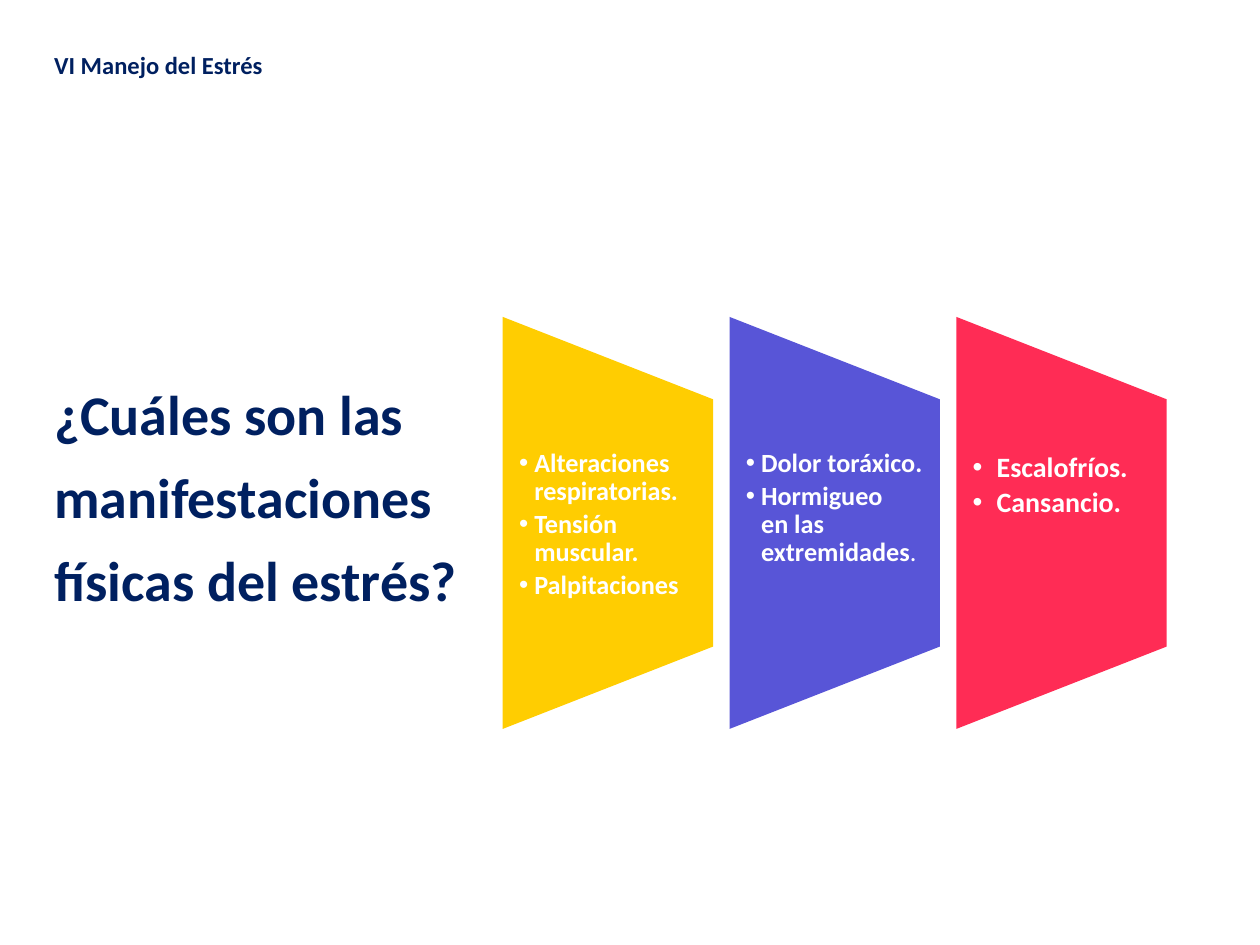
"""Build the slide on the physical signs of stress."""
from copy import deepcopy
from dataclasses import dataclass

from lxml import etree
from pptx import Presentation
from pptx.dml.color import RGBColor
from pptx.enum.shapes import MSO_SHAPE as Preset
from pptx.enum.text import MSO_ANCHOR as Anchor, MSO_AUTO_SIZE as AutoSize, PP_ALIGN as Align
from pptx.oxml.ns import qn
from pptx.util import Inches, Pt


@dataclass(frozen=True)
class Theme:
    font: str = "Calibri"
    navy: str = "002060"
    white: str = "FFFFFF"
    yellow: str = "FFCD01"
    violet: str = "5855D7"
    red: str = "FF2C55"
    question_size: int = 32
    header_size: int = 14
    list_size: int = 15
    short_list_size: int = 16


theme = Theme()


def write(shape, lines, size, color, bold=True, indent=None, line_spacing=1.0,
          before=0, after=0, inset=0.1, margin_top=0.05):
    frame = shape.text_frame
    frame.word_wrap = True
    frame.auto_size = AutoSize.NONE
    frame.vertical_anchor = Anchor.TOP
    frame.margin_left = frame.margin_right = Inches(inset)
    frame.margin_top = frame.margin_bottom = Inches(margin_top)
    for index, line in enumerate(lines):
        paragraph = frame.add_paragraph() if index else frame.paragraphs[0]
        properties = paragraph._p.get_or_add_pPr()
        hanging = Inches(indent or 0)
        properties.set("marL", str(hanging))
        properties.set("indent", str(-hanging))
        if indent:
            etree.SubElement(properties, qn("a:buFont"), typeface="Arial")
            etree.SubElement(properties, qn("a:buChar"), char="•")
        else:
            etree.SubElement(properties, qn("a:buNone"))
        paragraph.alignment = Align.LEFT
        paragraph.line_spacing = line_spacing
        paragraph.space_before = Pt(before if index else 0)
        paragraph.space_after = Pt(after)
        paragraph.text = line
        for run in paragraph.runs:
            run.font.name = theme.font
            run.font.size = Pt(size)
            run.font.bold = bold
            run.font.color.rgb = RGBColor.from_string(color)
        for line_break in paragraph._p.findall(qn("a:br")):
            line_break.insert(0, deepcopy(paragraph.runs[0]._r.rPr))


def place(shape, left, top, width, height):
    shape.left, shape.top = Inches(left), Inches(top)
    shape.width, shape.height = Inches(width), Inches(height)


presentation = Presentation()
presentation.slide_width = Inches(10)
presentation.slide_height = Inches(7.5)
comparison_layout = presentation.slide_layouts[4]
slide = presentation.slides.add_slide(comparison_layout)
bodies = {body.placeholder_format.idx: body for body in slide.placeholders}

question = slide.shapes.title
place(question, 0.33, 2.96, 4.01, 2.17)
write(question, ["¿Cuáles son las", "manifestaciones", "físicas del estrés?"],
      size=theme.question_size, color=theme.navy, before=4.5, after=4.5)

header = bodies[1]
place(header, 0.33, 0.35, 4.94, 0.34)
write(header, ["VI Manejo del Estrés"], size=theme.header_size, color=theme.navy)

panels = [
    (bodies[2], theme.yellow, theme.list_size, 0.12, 3.57,
     ["Alteraciones respiratorias.", "Tensión muscular.", "Palpitaciones"]),
    (bodies[3], theme.violet, theme.list_size, 0.12, 3.57,
     ["Dolor toráxico.", "Hormigueo\ven las extremidades"]),
    (bodies[4], theme.red, theme.short_list_size, 0.19, 3.6,
     ["Escalofríos.", "Cansancio."]),
]
panel_left, panel_step, panel_width = 3.99, 1.8, 1.67
panel_middle, panel_height = 4.15, 3.27

for column, (body, fill, size, indent, top, lines) in enumerate(panels):
    left = panel_left + column * panel_step
    panel = slide.shapes.add_shape(
        Preset.FLOWCHART_MANUAL_OPERATION,
        Inches(left + (panel_width - panel_height) / 2), Inches(panel_middle - panel_width / 2),
        Inches(panel_height), Inches(panel_width))
    panel.rotation = 270
    panel.shadow.inherit = False
    panel.fill.solid()
    panel.fill.fore_color.rgb = RGBColor.from_string(fill)
    panel.line.fill.background()
    body._element.addprevious(panel._element)
    place(body, left, top, panel_width, 1.5)
    write(body, lines, size=size, color=theme.white, indent=indent,
          line_spacing=0.9, after=2.5, inset=0.13, margin_top=0)

last_symptom = bodies[3].text_frame.paragraphs[-1]
full_stop = last_symptom.add_run()
full_stop.text = "."
full_stop.font.name = theme.font
full_stop.font.size = Pt(theme.list_size)
full_stop.font.bold = False
full_stop.font.color.rgb = RGBColor.from_string(theme.white)

presentation.save("out.pptx")
